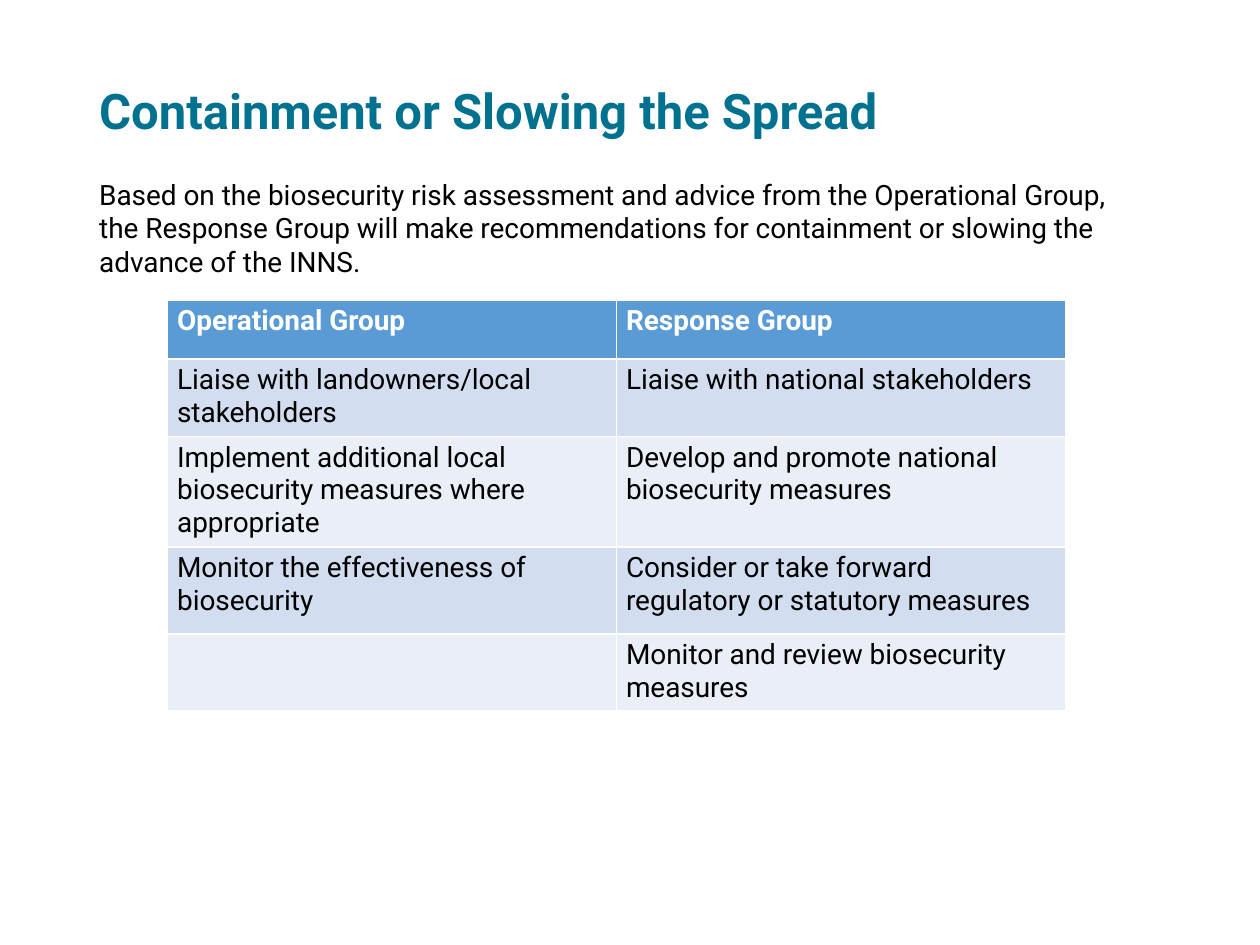
"""Build the slide on containing or slowing the spread of a species."""
from dataclasses import dataclass

from pptx import Presentation
from pptx.dml.color import RGBColor
from pptx.enum.text import MSO_ANCHOR, MSO_AUTO_SIZE
from pptx.util import Cm, Pt


@dataclass(frozen=True)
class Theme:
    font: str = "Roboto"
    title_size: int = 28
    body_size: int = 16
    title: str = "00728F"
    text: str = "000000"
    header_text: str = "FFFFFF"
    header_fill: str = "5B9BD5"
    band_fills: tuple = ("D2DEEF", "EAEFF7")


THEME = Theme()
TITLE = "Containment or Slowing the Spread"
INTRODUCTION = (
    "Based on the biosecurity risk assessment and advice from the Operational Group, "
    "the Response Group will make recommendations for containment or slowing the "
    "advance of the INNS."
)
GROUP_ACTIONS = [
    ("Operational Group", "Response Group"),
    ("Liaise with landowners/local stakeholders", "Liaise with national stakeholders"),
    ("Implement additional local biosecurity measures where appropriate",
     "Develop and promote national biosecurity measures"),
    ("Monitor the effectiveness of biosecurity",
     "Consider or take forward regulatory or statutory measures"),
    ("", "Monitor and review biosecurity measures"),
]
ROW_HEIGHTS = (1.19, 1.19, 1.75, 1.75, 1.19)
COLUMN_WIDTH = 9.05


def write_text(text_frame, text, size, color, bold=False):
    text_frame.text = text
    for run in text_frame.paragraphs[0].runs:
        run.font.name = THEME.font
        run.font.size = Pt(size)
        run.font.bold = bold
        run.font.color.rgb = RGBColor.from_string(color)


def add_text(slide, left, top, width, height, text, size, color, bold=False):
    shape = slide.shapes.add_textbox(Cm(left), Cm(top), Cm(width), Cm(height))
    shape.text_frame.word_wrap = True
    write_text(shape.text_frame, text, size, color, bold)
    return shape.text_frame


def fill_cell(cell, text, fill, color, bold):
    cell.fill.solid()
    cell.fill.fore_color.rgb = RGBColor.from_string(fill)
    cell.margin_left = cell.margin_right = Cm(0.19)
    cell.margin_top = cell.margin_bottom = Cm(0.1)
    write_text(cell.text_frame, text, THEME.body_size, color, bold)


def add_action_table(slide, left, top):
    row_count, column_count = len(GROUP_ACTIONS), len(GROUP_ACTIONS[0])
    table = slide.shapes.add_table(
        row_count, column_count, Cm(left), Cm(top),
        Cm(COLUMN_WIDTH * column_count), Cm(sum(ROW_HEIGHTS)),
    ).table
    for row_index, (height, actions) in enumerate(zip(ROW_HEIGHTS, GROUP_ACTIONS)):
        table.rows[row_index].height = Cm(height)
        is_header = row_index == 0
        fill = THEME.header_fill if is_header else THEME.band_fills[(row_index - 1) % 2]
        color = THEME.header_text if is_header else THEME.text
        for column_index, action in enumerate(actions):
            fill_cell(table.cell(row_index, column_index), action, fill, color, is_header)


def main():
    presentation = Presentation()
    presentation.slide_width, presentation.slide_height = Cm(25.4), Cm(19.05)
    slide = presentation.slides.add_slide(presentation.slide_layouts[6])

    title = add_text(slide, 1.75, 1.02, 20.93, 2.54, TITLE,
                     THEME.title_size, THEME.title, bold=True)
    title.vertical_anchor = MSO_ANCHOR.MIDDLE
    title.paragraphs[0].line_spacing = 0.9

    introduction = add_text(slide, 1.75, 3.45, 21.34, 6.4, INTRODUCTION,
                            THEME.body_size, THEME.text)
    introduction.auto_size = MSO_AUTO_SIZE.SHAPE_TO_FIT_TEXT

    add_action_table(slide, 3.38, 6.05)
    presentation.save("out.pptx")


if __name__ == "__main__":
    main()
